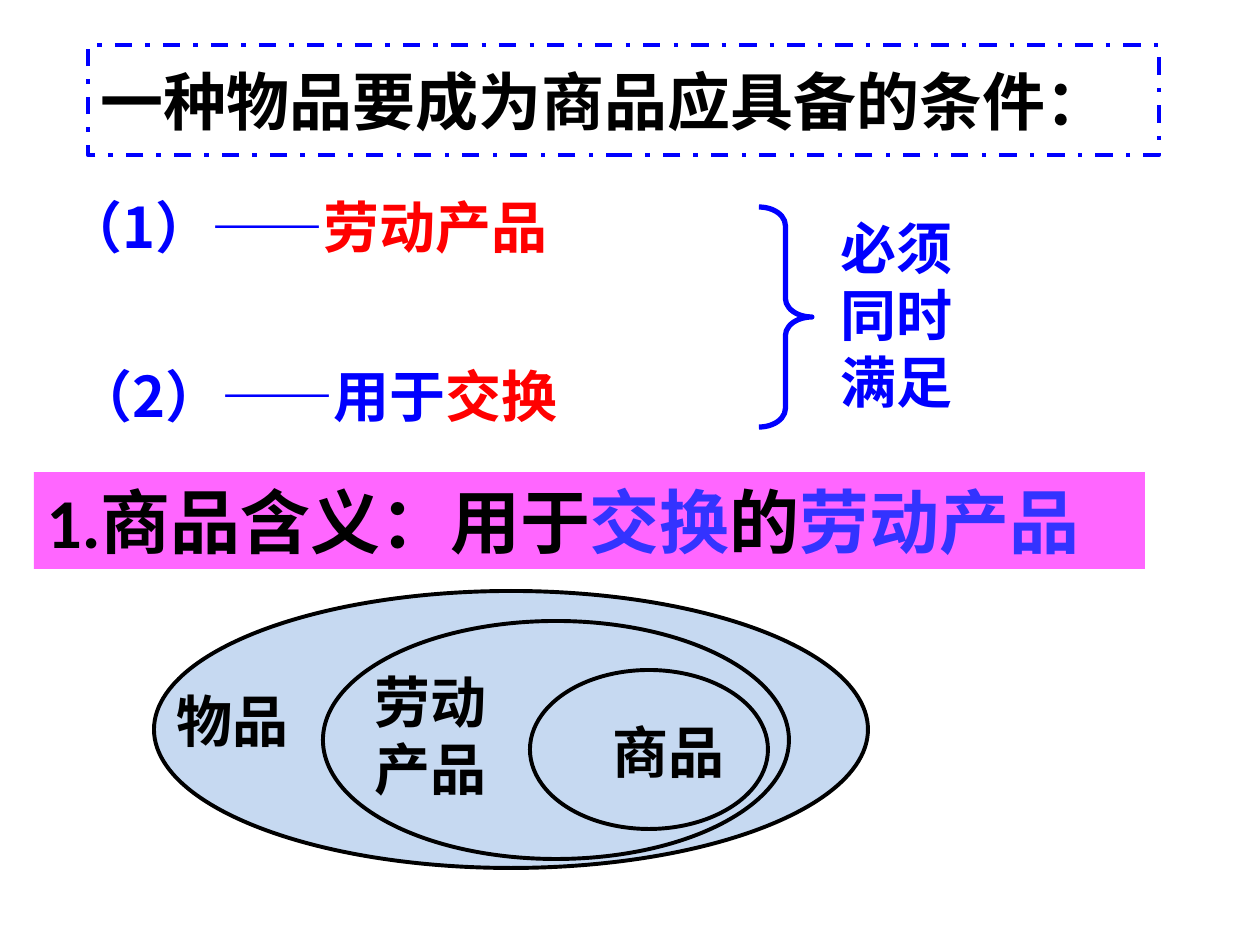
from dataclasses import dataclass

from lxml import etree
from pptx import Presentation
from pptx import util as u
from pptx.dml.color import RGBColor
from pptx.enum import dml, shapes, text
from pptx.oxml import ns

SCALE = 914400 / 126


@dataclass(frozen=True)
class Theme:
    black: str = "000000"
    blue: str = "0000FF"
    red: str = "FF0000"
    pink: str = "FF66FF"
    accent: str = "3333FF"
    pale: str = "C6D9F1"
    latin: str = "Calibri"
    asian: str = "Noto Sans CJK SC"
    body: int = 32
    title: int = 36
    banner: int = 40


T = Theme()


def px(*vals):
    return [u.Emu(round(v * SCALE)) for v in vals]


def shift(box, x, y, w, h):
    return box[0] + x, box[1] + y, w, h


def write(shape, runs, size=T.body, face=T.latin, anchor=text.MSO_ANCHOR.TOP):
    frame = shape.text_frame
    form = {"word_wrap": True, "auto_size": text.MSO_AUTO_SIZE.NONE,
            "vertical_anchor": anchor}
    for key, val in form.items():
        setattr(frame, key, val)
    para = frame.paragraphs[0]
    para.alignment = text.PP_ALIGN.LEFT
    for words, color in runs:
        run = para.add_run()
        run.text = words
        for key, val in {"name": face, "size": u.Pt(size), "bold": True}.items():
            setattr(run.font, key, val)
        run.font.color.rgb = RGBColor.from_string(color)
        east = etree.SubElement(run.font._element, ns.qn("a:ea"))
        east.set("typeface", T.asian)


def label(slide, box, runs, face=T.latin):
    write(slide.shapes.add_textbox(*px(*box)), runs, face=face)


def draw(host, kind, box, fill=None, line=None, width=2.25):
    shape = host.add_shape(kind, *px(*box))
    shape.shadow.inherit = False
    if fill:
        shape.fill.solid()
        shape.fill.fore_color.rgb = RGBColor.from_string(fill)
    else:
        shape.fill.background()
    if line:
        shape.line.color.rgb = RGBColor.from_string(line)
        shape.line.width = u.Pt(width)
    else:
        shape.line.fill.background()
    return shape


def head(slide, box):
    title = slide.shapes.title
    for key, val in zip(("left", "top", "width", "height"), px(*box)):
        setattr(title, key, val)
    title.line.color.rgb = RGBColor.from_string(T.blue)
    title.line.width = u.Pt(2.5)
    title.line.dash_style = dml.MSO_LINE.DASH_DOT
    write(title, [("一种物品要成为商品应具备的条件：", T.black)],
          T.title, anchor=text.MSO_ANCHOR.MIDDLE)


def terms(slide, box):
    rows = [
        ((0, 0, 912, 79), [("（1）——", T.blue), ("劳动产品", T.red)]),
        ((10, 169, 932, 79), [("（2）——用于", T.blue), ("交换", T.red)]),
    ]
    for place, runs in rows:
        label(slide, shift(box, *place), runs, T.asian)
    label(slide, shift(box, 774, 21, 189, 217), [("必须同时满足", T.blue)])
    brace = draw(slide.shapes, shapes.MSO_SHAPE.RIGHT_BRACE,
                 shift(box, 705, 21, 53, 220), line=T.blue, width=3)
    brace.adjustments[0] = 0.35


def banner(slide, box):
    bar = draw(slide.shapes, shapes.MSO_SHAPE.RECTANGLE, box, T.pink)
    write(bar, [("1.商品含义：用于", T.black), ("交换", T.accent),
                ("的", T.black), ("劳动产品", T.accent)], T.banner)


def nest(slide, box):
    group = slide.shapes.add_group_shape()
    rings = [(0, 0, 714, 277), (169, 30, 466, 238), (376, 79, 238, 159)]
    for place in rings:
        draw(group.shapes, shapes.MSO_SHAPE.OVAL, shift(box, *place),
             T.pale, T.black)
    names = [("商品", 446, 120, 79), ("劳动产品", 208, 70, 147),
             ("物品", 10, 89, 79)]
    for name, x, y, high in names:
        label(slide, shift(box, x, y, 149, high), [(name, T.black)])


def main():
    deck = Presentation()
    deck.slide_width, deck.slide_height = px(1260, 945)
    slide = deck.slides.add_slide(deck.slide_layouts[5])
    head(slide, (88, 45, 1071, 110))
    terms(slide, (54, 186, 963, 248))
    banner(slide, (34, 472, 1111, 97))
    nest(slide, (154, 591, 714, 277))
    deck.save("out.pptx")


if __name__ == "__main__":
    main()
